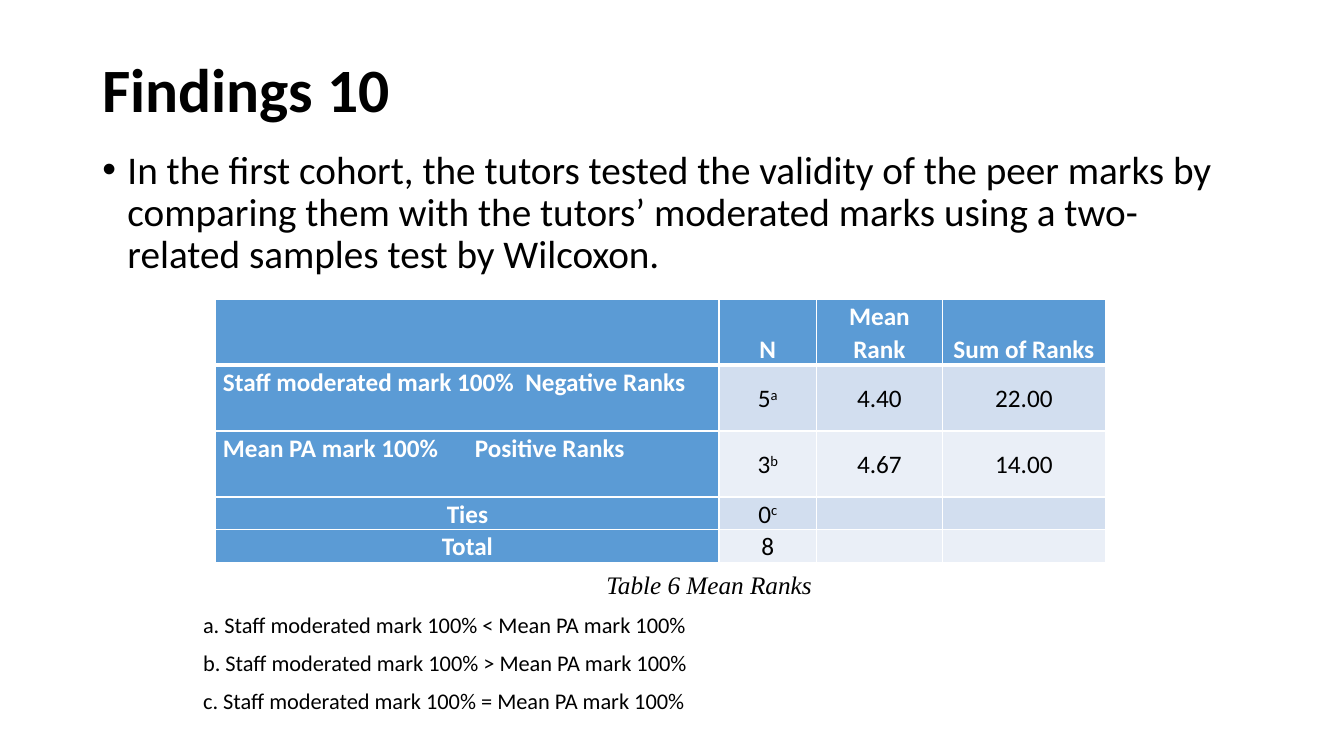
from dataclasses import dataclass

from lxml.etree import SubElement
from pptx import Presentation
from pptx.dml.color import RGBColor
from pptx.enum.text import MSO_ANCHOR, PP_ALIGN
from pptx.oxml.ns import qn
from pptx.util import Inches, Pt


@dataclass(frozen=True)
class Theme:
    font: str = "Calibri"
    serif: str = "Times New Roman"
    ink: str = "000000"
    white: str = "FFFFFF"
    head: str = "5B9BD5"
    bands: tuple = ("D2DEEF", "EAEFF7")
    title: int = 44
    body: int = 28
    cell: int = 18
    note: int = 16
    tight: float = 0.9
    loose: float = 1.07


def grid(count):
    """Length of a number of grid units: the slide has 160 columns and 90 rows."""
    return Inches(count / 12)


def put(para, text, size, color, font, bold=False, italic=False,
        align=PP_ALIGN.LEFT, line=1.0, before=0, left=0, bullet=None, tab=None):
    """Write formatted text; what follows a ^ is raised."""
    para.alignment, para.line_spacing = align, line
    para.space_before = Pt(before)
    props = para._p.get_or_add_pPr()
    props.set("marL", str(grid(left)))
    props.set("indent", str(-grid(left) if bullet else 0))
    if bullet:
        SubElement(props, qn("a:buFont"), typeface="Arial")
        SubElement(props, qn("a:buChar"), char=bullet)
    if tab:
        stops = SubElement(props, qn("a:tabLst"))
        SubElement(stops, qn("a:tab"), pos=str(grid(tab)), algn="l")
    for level, part in enumerate(text.split("^")):
        run = para.add_run()
        run.text = part
        face = run.font
        face.name, face.size = font, Pt(size)
        face.bold, face.italic = bold, italic
        face.color.rgb = RGBColor.from_string(color)
        if level:
            run._r.get_or_add_rPr().set("baseline", "30000")


def edge(cell, color, low):
    """Draw cell borders, with the lower one as wide as given in points."""
    props = cell._tc.get_or_add_tcPr()
    for side, width in zip("LRTB", (1, 1, 1, low)):
        rule = SubElement(props, qn(f"a:ln{side}"), w=str(Pt(width)))
        fill = SubElement(rule, qn("a:solidFill"))
        SubElement(fill, qn("a:srgbClr"), val=color)


class Deck:
    def __init__(self, theme):
        self.theme = theme
        self.show = Presentation()
        self.show.slide_width, self.show.slide_height = grid(160), grid(90)
        self.slide = self.show.slides.add_slide(self.show.slide_layouts[6])

    def text(self, box, items, anchor=MSO_ANCHOR.TOP):
        """Add a text box; each item is a text and its format."""
        frame = self.slide.shapes.add_textbox(*map(grid, box)).text_frame
        frame.word_wrap, frame.vertical_anchor = True, anchor
        for spot, (words, form) in enumerate(items):
            para = frame.add_paragraph() if spot else frame.paragraphs[0]
            look = dict(color=self.theme.ink, font=self.theme.font,
                        line=self.theme.tight)
            put(para, words, **(look | form))

    def table(self, at, cols, rows, data, tabs):
        """Add a table; tabs gives the tab stop of a row's label."""
        size = sum(cols), sum(rows)
        table = self.slide.shapes.add_table(
            len(rows), len(cols), *map(grid, (*at, *size))).table
        for col, width in zip(table.columns, cols):
            col.width = grid(width)
        for row, height in zip(table.rows, rows):
            row.height = grid(height)
        for y, line in enumerate(data):
            for x, words in enumerate(line):
                self.cell(table.cell(y, x), words, y, x, tabs.get(y))

    def cell(self, cell, words, y, x, tab):
        theme = self.theme
        label = x == 0 or y == 0
        cell.margin_left = cell.margin_right = Inches(0.07)
        cell.margin_top = cell.margin_bottom = 0
        edge(cell, theme.white, 1 if y else 3)
        cell.fill.solid()
        shade = theme.head if label else theme.bands[(y - 1) % 2]
        cell.fill.fore_color.rgb = RGBColor.from_string(shade)
        if y == 0:
            cell.vertical_anchor = MSO_ANCHOR.BOTTOM
        else:
            cell.vertical_anchor = MSO_ANCHOR.MIDDLE if x else MSO_ANCHOR.TOP
        para = cell.text_frame.paragraphs[0]
        if words:
            put(para, words, theme.cell, theme.white if label else theme.ink,
                theme.font, bold=label, line=theme.loose, tab=tab if x == 0 else None,
                align=PP_ALIGN.LEFT if tab and x == 0 else PP_ALIGN.CENTER)
        else:
            para.font.size = Pt(theme.cell)


def main():
    theme = Theme()
    deck = Deck(theme)
    deck.text((11, 4.8, 138, 12.5),
              [("Findings 10", dict(size=theme.title, bold=True))],
              MSO_ANCHOR.MIDDLE)
    deck.text((11, 17.3, 138, 17), [(
        "In the first cohort, the tutors tested the validity of the peer marks "
        "by comparing them with the tutors’ moderated marks using a "
        "two-related samples test by Wilcoxon.",
        dict(size=theme.body, left=3, bullet="•"))])
    deck.table(
        (25.7, 35.6), (59.9, 11.6, 15, 19.4), (7.86, 7.86, 7.86, 3.9, 3.9),
        [("", "N", "Mean Rank", "Sum of Ranks"),
         ("Staff moderated mark 100%\tNegative Ranks", "5^a", "4.40", "22.00"),
         ("Mean PA mark 100%\tPositive Ranks", "3^b", "4.67", "14.00"),
         ("Ties", "0^c", "", ""),
         ("Total", "8", "", "")],
        tabs={1: 42.7, 2: 41})
    notes = [(f"{key}. Staff moderated mark 100% {sign} Mean PA mark 100%",
              dict(size=theme.note, before=10))
             for key, sign in zip("abc", "<>=")]
    caption = ("Table 6 Mean Ranks",
               dict(size=theme.cell, font=theme.serif, italic=True, left=48))
    deck.text((23, 67.6, 120, 19), [caption, *notes])
    deck.show.save("out.pptx")


if __name__ == "__main__":
    main()
